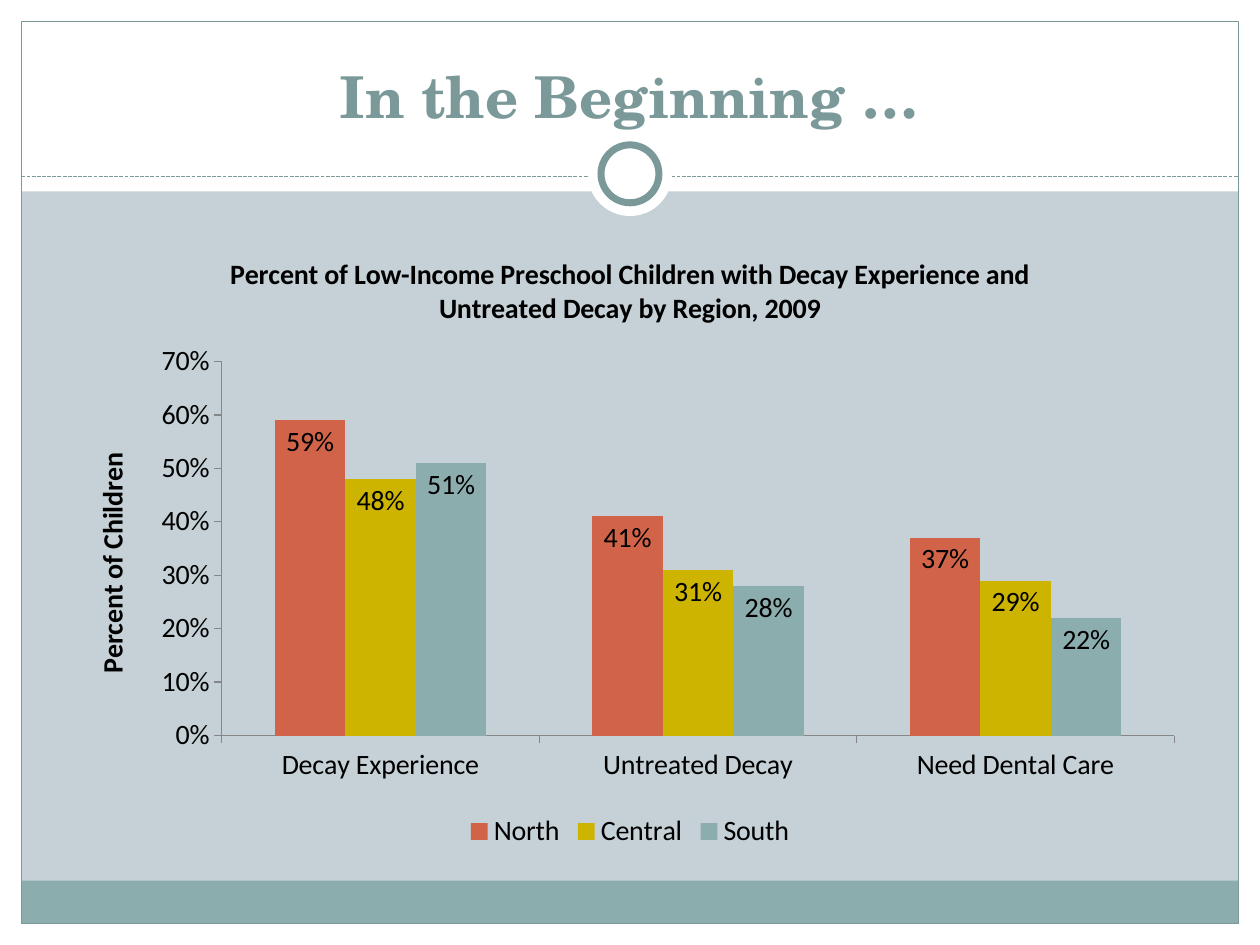
"""Build the slide on preschool tooth decay by region."""
from lxml import etree
from pptx import Presentation, util as u
from pptx.chart.data import CategoryChartData
from pptx.dml.color import RGBColor
from pptx.enum import chart as charts, dml, shapes, text
from pptx.oxml.ns import qn

TITLE = "In the Beginning …"
CHART_TITLE = ("Percent of Low-Income Preschool Children with Decay Experience "
               "and Untreated Decay by Region, 2009")
AXIS_TITLE = "Percent of Children"
CATEGORIES = ["Decay Experience", "Untreated Decay", "Need Dental Care"]
SERIES = [
    ("North", (0.59, 0.41, 0.37), "north"),
    ("Central", (0.48, 0.31, 0.29), "central"),
    ("South", (0.51, 0.28, 0.22), "south"),
]
THEME = {
    "background": "C5D1D7", "white": "FFFFFF", "accent": "7C999A", "text": "000000",
    "axis": "868686", "north": "D16349", "central": "CCB400", "south": "8CADAE",
    "title_font": "TeX Gyre Schola", "chart_font": "Calibri",
    "title_size": 33, "chart_size": 16,
}
WIDTH, HEIGHT, MARGIN = 10, 7.5, 0.17
INNER_WIDTH, INNER_HEIGHT = WIDTH - 2 * MARGIN, HEIGHT - 2 * MARGIN
RULE_Y, RING_Y = 1.4, 1.38
RECTANGLE, OVAL = shapes.MSO_SHAPE.RECTANGLE, shapes.MSO_SHAPE.OVAL
FRAME_PARTS = [
    (RECTANGLE, (0, HEIGHT - MARGIN, WIDTH, MARGIN), "white", None),
    (RECTANGLE, (0, 0, WIDTH, 1.52), "white", None),
    (RECTANGLE, (0, 0, MARGIN, HEIGHT), "white", None),
    (RECTANGLE, (WIDTH - MARGIN, 0, MARGIN, HEIGHT), "white", None),
    (RECTANGLE, (MARGIN, 6.99, INNER_WIDTH, 0.34), "south", None),
    (RECTANGLE, (MARGIN, MARGIN, INNER_WIDTH, INNER_HEIGHT), None, 0.75),
]
RING_PARTS = [(0.67, None), (0.46, 4)]
PLOT_LAYOUT = {"x": 0.14, "y": 0.21, "w": 0.84, "h": 0.6}


def color(name):
    return RGBColor.from_string(THEME[name])


def style_font(font, kind, ink, bold=False):
    font.name = THEME[f"{kind}_font"]
    font.size = u.Pt(THEME[f"{kind}_size"])
    font.color.rgb = color(ink)
    font.bold = bold


def add_part(page, preset, place, fill, line_width):
    part = page.shapes.add_shape(preset, *map(u.Inches, place))
    part.shadow.inherit = False
    if fill:
        part.fill.solid()
        part.fill.fore_color.rgb = color(fill)
    else:
        part.fill.background()
    if line_width:
        part.line.color.rgb = color("accent")
        part.line.width = u.Pt(line_width)
    else:
        part.line.fill.background()


def add_frame(page):
    for part in FRAME_PARTS:
        add_part(page, *part)
    rule = page.shapes.add_connector(
        shapes.MSO_CONNECTOR.STRAIGHT,
        *map(u.Inches, (MARGIN, RULE_Y, WIDTH - MARGIN, RULE_Y)))
    rule.line.color.rgb = color("accent")
    rule.line.width = u.Pt(0.75)
    rule.line.dash_style = dml.MSO_LINE.SQUARE_DOT
    etree.SubElement(rule.element.spPr, qn("a:effectLst"))
    for size, line_width in RING_PARTS:
        place = ((WIDTH - size) / 2, RING_Y - size / 2, size, size)
        add_part(page, OVAL, place, "white", line_width)


def place_title(page):
    title = page.shapes.title
    title.left, title.top, title.width, title.height = map(
        u.Inches, (0.33, 0.25, 9.33, 0.83))
    frame = title.text_frame
    frame.text = TITLE
    frame.auto_size = text.MSO_AUTO_SIZE.NONE
    frame.vertical_anchor = text.MSO_ANCHOR.BOTTOM
    para = frame.paragraphs[0]
    para.alignment = text.PP_ALIGN.CENTER
    style_font(para.font, "title", "accent", bold=True)
    title.element.getparent().append(title.element)


def set_chart_title(owner, words):
    frame = owner.text_frame
    frame.text = words
    style_font(frame.paragraphs[0].font, "chart", "text", bold=True)


def set_plot_layout(chart):
    area = chart.element.find(".//" + qn("c:plotArea"))
    layout = area.find(qn("c:layout"))
    if layout is None:
        layout = etree.Element(qn("c:layout"))
        area.insert(0, layout)
    manual = etree.SubElement(layout, qn("c:manualLayout"))
    settings = {"layoutTarget": "inner", "xMode": "edge", "yMode": "edge", **PLOT_LAYOUT}
    for name, value in settings.items():
        etree.SubElement(manual, qn(f"c:{name}"), val=str(value))


def add_decay_chart(page):
    data = CategoryChartData(number_format="0%")
    data.categories = CATEGORIES
    for name, values, _ in SERIES:
        data.add_series(name, values)
    chart = page.shapes.add_chart(
        charts.XL_CHART_TYPE.COLUMN_CLUSTERED,
        *map(u.Inches, (0.5, 1.83, 9, 4.95)), data).chart
    style_font(chart.font, "chart", "text")
    set_chart_title(chart.chart_title, CHART_TITLE)
    chart.chart_title.include_in_layout = False
    chart.has_legend = True
    chart.legend.position = charts.XL_LEGEND_POSITION.BOTTOM
    chart.legend.include_in_layout = False

    for axis in (chart.category_axis, chart.value_axis):
        axis.has_major_gridlines = False
        axis.major_tick_mark = charts.XL_TICK_MARK.OUTSIDE
        axis.format.line.color.rgb = color("axis")
    scale = chart.value_axis
    scale.minimum_scale, scale.maximum_scale, scale.major_unit = 0, 0.7, 0.1
    scale.tick_labels.number_format = "0%"
    scale.tick_labels.number_format_is_linked = False
    set_chart_title(scale.axis_title, AXIS_TITLE)

    plot = chart.plots[0]
    plot.gap_width, plot.overlap = 150, 0
    plot.vary_by_categories = False
    for series, (_, _, fill) in zip(plot.series, SERIES):
        series.format.fill.solid()
        series.format.fill.fore_color.rgb = color(fill)
        labels = series.data_labels
        labels.show_value = True
        labels.position = charts.XL_LABEL_POSITION.INSIDE_END
        labels.number_format = "0%"
        labels.number_format_is_linked = False
        style_font(labels.font, "chart", "text")
    set_plot_layout(chart)


def main():
    deck = Presentation()
    deck.slide_width, deck.slide_height = u.Inches(WIDTH), u.Inches(HEIGHT)
    page = deck.slides.add_slide(deck.slide_layouts[5])
    page.background.fill.solid()
    page.background.fill.fore_color.rgb = color("background")
    add_frame(page)
    place_title(page)
    add_decay_chart(page)
    deck.save("out.pptx")


if __name__ == "__main__":
    main()
